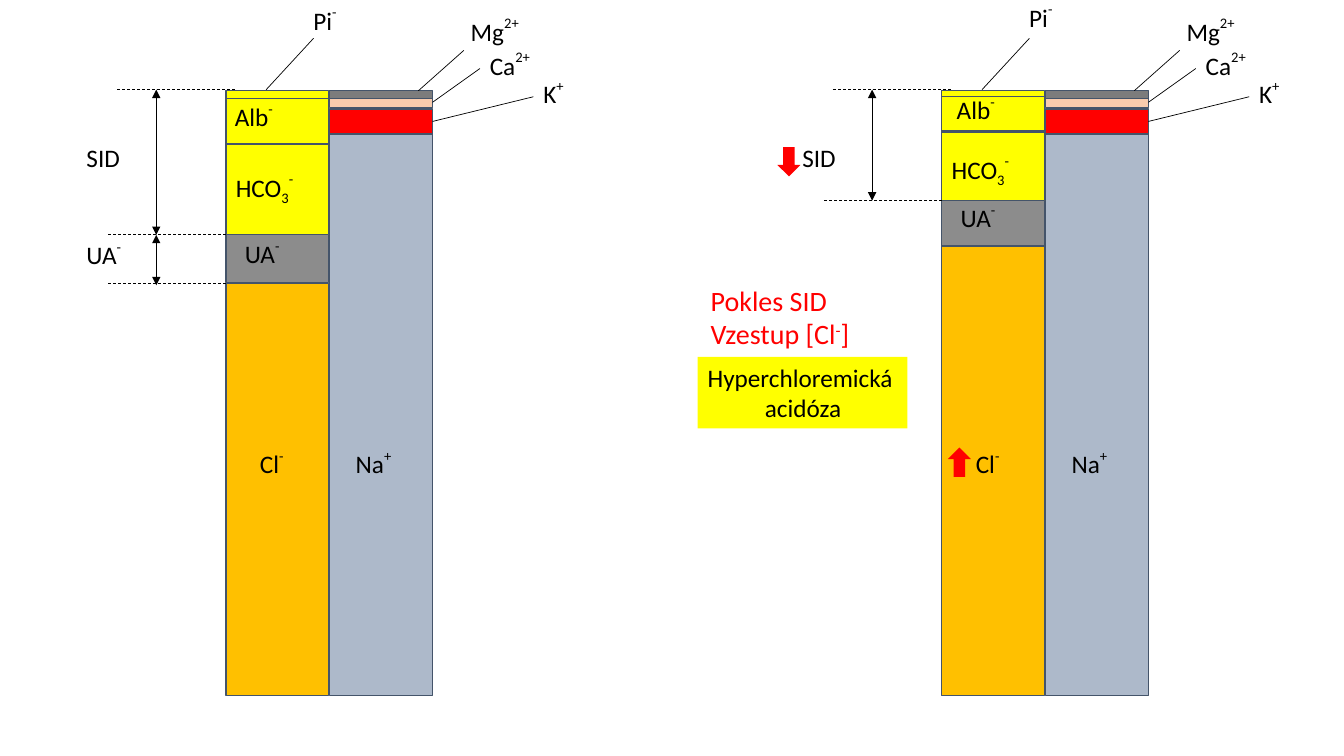
from lxml import etree
from pptx import Presentation
from pptx.dml.color import RGBColor
from pptx.enum.dml import MSO_LINE
from pptx.enum.shapes import MSO_CONNECTOR, MSO_SHAPE
from pptx.enum.text import MSO_AUTO_SIZE, PP_ALIGN
from pptx.oxml.ns import qn
from pptx.util import Inches, Pt

RECTANGLE, DOWN_ARROW = MSO_SHAPE.RECTANGLE, MSO_SHAPE.DOWN_ARROW
STRAIGHT, DASH = MSO_CONNECTOR.STRAIGHT, MSO_LINE.DASH
FIT_TEXT = MSO_AUTO_SIZE.SHAPE_TO_FIT_TEXT
LEFT, CENTER = PP_ALIGN.LEFT, PP_ALIGN.CENTER
RIGHT_SIDE = 3

# The slide is a grid of square cells, 100 to the inch.
COLUMNS, ROWS, CELLS_PER_INCH = 1333, 750, 100
BAR_WIDTH, BAR_TOP, BAR_BOTTOM = 102, 90, 690
CATION_X = 103
LABEL_HEIGHT = 50
TOP_LINE = 89
MEASURE_X = -69
SIDE_LABEL_X = -148

COLORS = {
    "black": "000000", "red": "FF0000", "yellow": "FFFF00", "outline": "44546A",
    "sodium": "ADB9CA", "calcium": "F8CBAD", "magnesium": "7C7C7C",
    "chloride": "FFC000", "unmeasured": "8C8C8C",
}
MINUS, PLUS, DOUBLE_PLUS = ("-", 50), ("+", 50), ("2+", 50)
UNMEASURED = [("UA", 0), MINUS]

# name: top, height, colour
CATIONS = {
    "Na": (133, BAR_BOTTOM - 133, "sodium"),
    "K": (108, 25, "red"),
    "Ca": (96, 11, "calcium"),
    "Mg": (BAR_TOP, 8, "magnesium"),
}
# text, charge, x, y, width
ION_LABELS = [
    ("Mg", DOUBLE_PLUS, 233, 9, 91),
    ("Ca", DOUBLE_PLUS, 252, 43, 81),
    ("K", PLUS, 305, 71, 57),
    ("Na", PLUS, 119, 438, 72),
    ("Cl", MINUS, 24, 438, 59),
]
NORMAL = {
    "x": 224, "chloride_top": 281, "unmeasured_top": 232,
    "bicarbonate": (143, 90), "albumin": (98, 45), "phosphate_height": 10,
    "phosphate_label_y": -2, "bicarbonate_label_y": 164,
    "albumin_label": (-1, 94), "sid_bottom": 233,
}
ACIDOSIS = {
    "x": 934, "chloride_top": 244, "unmeasured_top": 196,
    "bicarbonate": (131, 68), "albumin": (96, 34), "phosphate_height": 7,
    "phosphate_label_y": -5, "bicarbonate_label_y": 146,
    "albumin_label": (5, 87), "sid_bottom": 199,
}


def cells(count):
    return Inches(count / CELLS_PER_INCH)


def color(name):
    return RGBColor.from_string(COLORS[name])


def add_block(slide, x, y, width, height, fill, outline=None, kind=RECTANGLE, rotation=0):
    shape = slide.shapes.add_shape(kind, cells(x), cells(y), cells(width), cells(height))
    shape.shadow.inherit = False
    shape.rotation = rotation
    shape.fill.solid()
    shape.fill.fore_color.rgb = color(fill)
    if outline:
        shape.line.color.rgb = color(outline)
        shape.line.width = Pt(1)
    else:
        shape.line.fill.background()
    return shape


def write_text(shape, paragraphs, size=18, ink="black", alignments=(LEFT, LEFT)):
    """Fill a shape with paragraphs, each a list of (text, baseline percent) runs."""
    frame = shape.text_frame
    frame.word_wrap = False
    frame.auto_size = FIT_TEXT
    for index, (runs, alignment) in enumerate(zip(paragraphs, alignments)):
        paragraph = frame.add_paragraph() if index else frame.paragraphs[0]
        paragraph.alignment = alignment
        for text, baseline in runs:
            run = paragraph.add_run()
            run.text = text
            run.font.name = "Calibri"
            run.font.size = Pt(size)
            run.font.color.rgb = color(ink)
            if baseline:
                run.font._element.set("baseline", str(baseline * 1000))


def add_text(slide, x, y, width, *paragraphs, height=LABEL_HEIGHT, **text_format):
    box = slide.shapes.add_textbox(cells(x), cells(y), cells(width), cells(height))
    write_text(box, paragraphs, **text_format)


def add_line(slide, start, end, dashed=False, arrows=False, target=None):
    line = slide.shapes.add_connector(STRAIGHT, *map(cells, (*start, *end)))
    if target is not None:
        line.end_connect(target, RIGHT_SIDE)
    line.line.color.rgb = color("black")
    line.line.width = Pt(0.5)
    if dashed:
        line.line.dash_style = DASH
    properties = line._element.spPr
    if arrows:
        outline = properties.find(qn("a:ln"))
        for end_name in ("a:headEnd", "a:tailEnd"):
            etree.SubElement(outline, qn(end_name), type="triangle")
    etree.SubElement(properties, qn("a:effectLst"))


def add_cations(slide, x):
    blocks = {
        name: add_block(slide, x + CATION_X, top, BAR_WIDTH, height, fill, "outline")
        for name, (top, height, fill) in CATIONS.items()
    }
    edge = x + CATION_X + BAR_WIDTH
    add_line(slide, (x + 236, 50), (x + 191, BAR_TOP))
    add_line(slide, (x + 252, 68), (edge, 102), target=blocks["Ca"])
    add_line(slide, (x + 305, 96), (edge, 121), target=blocks["K"])


def add_anions(slide, state):
    x, chloride_top = state["x"], state["chloride_top"]
    unmeasured_top = state["unmeasured_top"]
    layers = [
        (chloride_top, BAR_BOTTOM - chloride_top, "chloride"),
        (BAR_TOP, state["phosphate_height"], "yellow"),
        (unmeasured_top, 48, "unmeasured"),
        (*state["bicarbonate"], "yellow"),
        (*state["albumin"], "yellow"),
    ]
    for top, height, fill in layers:
        add_block(slide, x, top, BAR_WIDTH, height, fill, "outline")
    add_line(slide, (x + 40, TOP_LINE), (x + 87, 38))
    albumin_x, albumin_y = state["albumin_label"]
    add_text(slide, x + 77, state["phosphate_label_y"], 56, [("Pi", 0), MINUS])
    add_text(slide, x + 9, unmeasured_top - 2, 76, UNMEASURED)
    add_text(slide, x, state["bicarbonate_label_y"], 110, [("HCO", 0), ("3", -25), MINUS])
    add_text(slide, x + albumin_x, albumin_y, 78, [("Alb", 0), MINUS])


def add_measure(slide, x, top, bottom, label, label_y):
    add_line(slide, (x + MEASURE_X, top), (x + MEASURE_X, bottom), arrows=True)
    add_text(slide, x + SIDE_LABEL_X, label_y, 76, label)


def add_ionogram(slide, state):
    x, sid_bottom = state["x"], state["sid_bottom"]
    add_cations(slide, x)
    add_anions(slide, state)
    for text, charge, label_x, label_y, width in ION_LABELS:
        add_text(slide, x + label_x, label_y, width, [(text, 0), charge])
    add_line(slide, (x + 9, TOP_LINE), (x - 109, TOP_LINE), dashed=True)
    add_line(slide, (x, sid_bottom), (x - 118, sid_bottom), dashed=True)
    add_measure(slide, x, TOP_LINE, sid_bottom, [("SID", 0)], 136)


def add_unmeasured_range(slide, state):
    x, bottom = state["x"], state["chloride_top"]
    add_line(slide, (x, bottom), (x - 118, bottom), dashed=True)
    add_measure(slide, x, state["sid_bottom"], bottom + 2, UNMEASURED, 231)


def add_conclusion(slide, x, y):
    diagnosis = add_block(slide, x, y + 78, 208, 71, "yellow")
    write_text(diagnosis, [[("Hyperchloremická", 0)], [(" acidóza", 0)]],
               alignments=(LEFT, CENTER))
    add_text(slide, x + 3, y, 170, [("Pokles SID", 0)],
             [("Vzestup [Cl", 0), ("-", 30), ("]", 0)], height=77, size=20, ink="red")


def add_change_arrows(slide, x):
    for arrow_x, arrow_y, rotation in ((x - 163, 146, 0), (x + 6, 444, 180)):
        add_block(slide, arrow_x, arrow_y, 23, 29, "red", kind=DOWN_ARROW, rotation=rotation)


def main():
    presentation = Presentation()
    presentation.slide_width, presentation.slide_height = cells(COLUMNS), cells(ROWS)
    slide = presentation.slides.add_slide(presentation.slide_layouts[6])
    add_ionogram(slide, NORMAL)
    add_unmeasured_range(slide, NORMAL)
    add_ionogram(slide, ACIDOSIS)
    add_conclusion(slide, 692, 276)
    add_change_arrows(slide, ACIDOSIS["x"])
    presentation.save("out.pptx")


if __name__ == "__main__":
    main()
